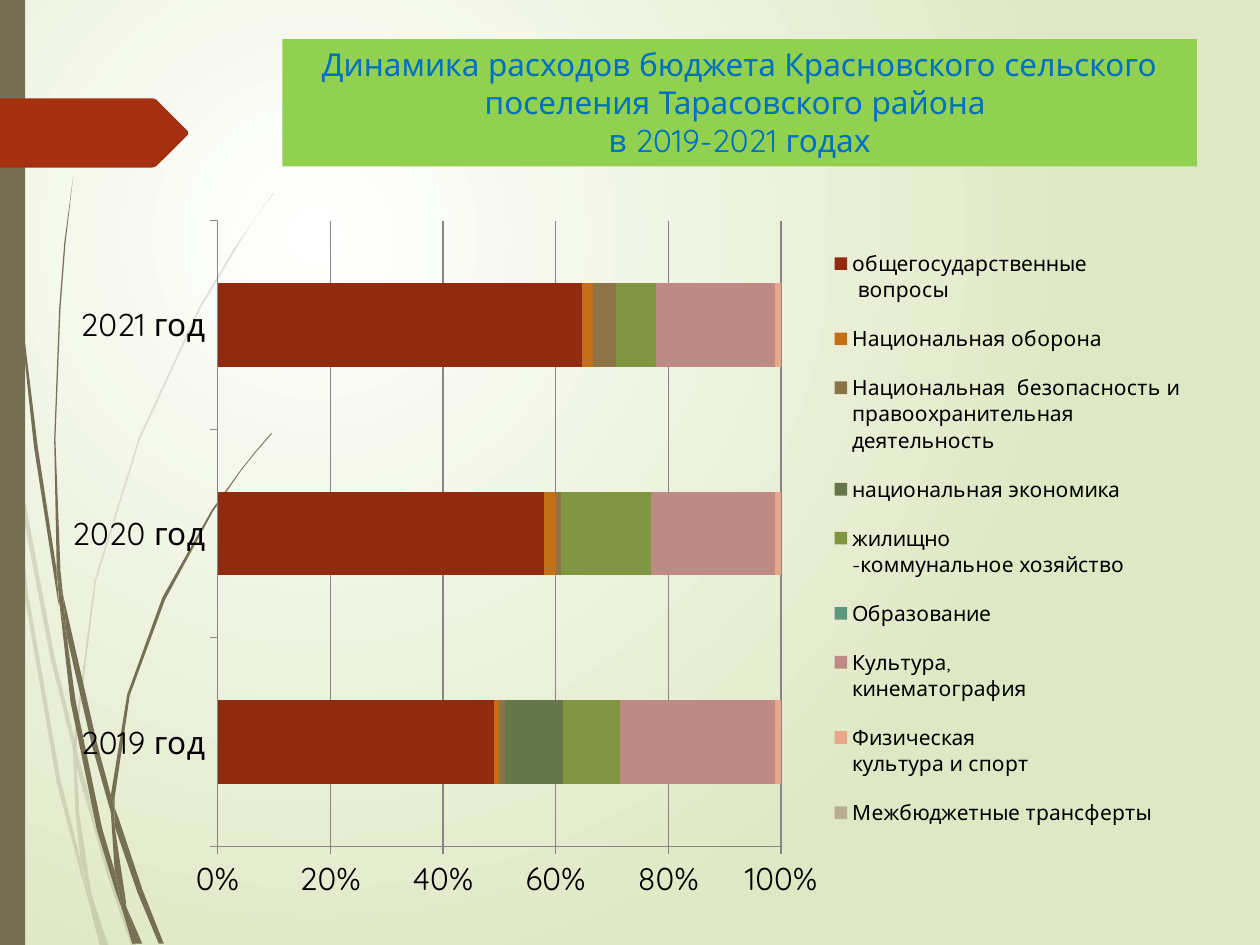
from lxml.etree import SubElement
from pptx import Presentation
from pptx.chart.data import CategoryChartData
from pptx.dml.color import RGBColor
from pptx.enum.chart import XL_CHART_TYPE, XL_LEGEND_POSITION, XL_TICK_MARK
from pptx.enum.shapes import MSO_SHAPE
from pptx.enum.text import MSO_ANCHOR, MSO_AUTO_SIZE, PP_ALIGN
from pptx.oxml import parse_xml
from pptx.oxml.ns import nsdecls, qn
from pptx.util import Pt

PX = 9144
FONT = "Quicksand"
WHITE = RGBColor(0xFF, 0xFF, 0xFF)
BLACK = RGBColor(0, 0, 0)
PALE_GREEN = RGBColor(0xDF, 0xE8, 0xC4)
BARK = RGBColor(0x76, 0x6F, 0x54)
RUST = RGBColor(0xA5, 0x30, 0x10)
LIME = RGBColor(0x92, 0xD0, 0x50)
BLUE = RGBColor(0x00, 0x70, 0xC0)
GREY = RGBColor(0x86, 0x86, 0x86)

YEARS = ["2019 год", "2020 год", "2021 год"]
EXPENSES = [
    ("общегосударственные\n вопросы", (48, 58, 64), RGBColor(0x91, 0x2A, 0x0E)),
    ("Национальная оборона", (1, 2, 2), RGBColor(0xC4, 0x6F, 0x15)),
    ("Национальная  безопасность и правоохранительная деятельность", (1, 1, 4),
     RGBColor(0x8C, 0x73, 0x48)),
    ("национальная экономика", (10, 0, 0), RGBColor(0x65, 0x76, 0x49)),
    ("жилищно\n-коммунальное хозяйство", (10, 16, 7), RGBColor(0x81, 0x96, 0x43)),
    ("Образование", (0, 0, 0), RGBColor(0x5D, 0x97, 0x80)),
    ("Культура, \nкинематография", (27, 22, 21), RGBColor(0xBE, 0x8A, 0x84)),
    ("Физическая\nкультура и спорт", (1, 1, 1), RGBColor(0xE8, 0xA8, 0x89)),
    ("Межбюджетные трансферты", (0, 0, 0), RGBColor(0xBC, 0xAC, 0x93)),
]

FAINT_WISPS = [
    [(8, 350), (6, 322), (0, 282), (0, 299), (7, 344)],
    [(40, 522), (59, 599), (59, 586), (43, 520), (10, 345), (12, 376)],
    [(64, 607), (61, 596), (61, 610), (85, 694), (104, 750), (108, 750), (88, 692)],
    [(83, 750), (86, 750), (73, 711)],
    [(64, 683), (48, 619), (22, 469), (12, 376), (8, 350), (19, 470), (45, 621),
     (64, 693), (70, 714), (69, 707)],
    [(58, 599), (60, 646), (64, 683), (67, 692), (73, 711), (72, 706), (63, 646),
     (61, 610), (61, 608)],
    [(61, 584), (76, 462), (111, 349), (159, 245), (187, 198), (201, 175), (217, 154),
     (217, 153), (201, 175), (186, 197), (158, 244), (110, 348), (75, 461), (59, 584),
     (59, 586), (61, 596)],
    [(70, 714), (79, 750), (82, 750)],
    [(61, 608), (61, 610), (61, 596), (59, 586), (58, 599)],
    [(67, 692), (65, 683), (69, 707), (70, 714), (82, 750), (83, 750), (73, 711)],
]
DARK_WISPS = [
    [(5, 110), (14, 233), (27, 355), (46, 477), (47, 481), (45, 457), (45, 453), (30, 355),
     (15, 232), (6, 109), (4, 48), (3, 0), (2, 0), (3, 48)],
    [(73, 592), (88, 645), (88, 633), (88, 631), (77, 590), (50, 472), (53, 505)],
    [(94, 649), (91, 641), (91, 656), (109, 708), (126, 749), (130, 749), (113, 706)],
    [(91, 691), (81, 657), (60, 556), (53, 505), (47, 477), (56, 557), (77, 659),
     (92, 708), (97, 722), (96, 717)],
    [(50, 472), (48, 453), (44, 349), (48, 245), (52, 193), (58, 141), (51, 193),
     (47, 245), (43, 349), (45, 449), (49, 472)],
    [(110, 749), (113, 749), (100, 719)],
    [(47, 477), (53, 505), (50, 472), (49, 472), (45, 449), (45, 453)],
    [(91, 633), (103, 552), (131, 476), (169, 406), (191, 374), (203, 359), (216, 344),
     (215, 344), (203, 358), (191, 373), (168, 405), (129, 474), (101, 551), (88, 631),
     (91, 641)],
    [(97, 722), (105, 749), (108, 749)],
    [(88, 645), (91, 691), (96, 706), (100, 719), (100, 716), (91, 656), (90, 651)],
    [(88, 645), (90, 651), (91, 656), (91, 641), (88, 631), (88, 633)],
    [(96, 706), (91, 691), (96, 717), (97, 722), (108, 749), (110, 749), (100, 719)],
]
POINTER = [(149, 29), (124, 54), (121, 55), (0, 55), (0, 0), (121, 0), (124, 1), (149, 26)]


def paint(shape, color, alpha=100):
    """Give a shape a flat fill with no line or shadow."""
    shape.fill.solid()
    shape.fill.fore_color.rgb = color
    shape.line.fill.background()
    shape.shadow.inherit = False
    if alpha < 100:
        tone = shape.fill._xPr.find(".//" + qn("a:srgbClr"))
        SubElement(tone, qn("a:alpha"), val=str(alpha * 1000))


def write(frame, words, size=18, color=BLACK, align=PP_ALIGN.LEFT):
    """Fill a text frame with one formatted paragraph."""
    frame.text = words
    for paragraph in frame.paragraphs:
        paragraph.alignment = align
        for run in paragraph.runs:
            run.font.name, run.font.size, run.font.color.rgb = FONT, Pt(size), color


def add_outline(shapes, points, left, top, color, alpha=100):
    """Draw a closed outline whose points start from left and top."""
    (x, y), *rest = [(left + dx, top + dy) for dx, dy in points]
    builder = shapes.build_freeform(x, y, scale=PX)
    builder.add_line_segments(rest, close=True)
    paint(builder.convert_to_shape(), color, alpha)


def add_background(slide):
    """Spread a round gradient from the upper left quarter."""
    fill = slide.background.fill
    fill.gradient()
    for stop, color in zip(fill.gradient_stops, (WHITE, PALE_GREEN)):
        stop.color.rgb = color
    gradient = slide._element.find(".//" + qn("a:gradFill"))
    gradient.replace(gradient.find(qn("a:lin")), parse_xml(
        f'<a:path {nsdecls("a")} path="circle">'
        '<a:fillToRect l="50000" t="50000" r="100000" b="100000"/></a:path>'))


def add_decor(slide, left, top, width, height):
    """Draw the wisps, the side strip and the pointer."""
    for wisps, alpha in ((FAINT_WISPS, 20), (DARK_WISPS, 100)):
        group = slide.shapes.add_group_shape()
        for wisp in wisps:
            add_outline(group.shapes, wisp, left, top, BARK, alpha)
    strip = slide.shapes.add_shape(
        MSO_SHAPE.RECTANGLE, left * PX, top * PX, width * PX, height * PX)
    paint(strip, BARK)
    add_outline(slide.shapes, POINTER, left, top + 78, RUST)


def add_title(slide, left, top, width, height):
    """Place the heading on its green plate."""
    title = slide.shapes.title
    title.left, title.top, title.width, title.height = (
        side * PX for side in (left, top, width, height))
    title.fill.solid()
    title.fill.fore_color.rgb = LIME
    frame = title.text_frame
    frame.word_wrap = True
    frame.auto_size = MSO_AUTO_SIZE.SHAPE_TO_FIT_TEXT
    frame.vertical_anchor = MSO_ANCHOR.TOP
    write(frame, "Динамика расходов бюджета Красновского сельского поселения "
          "Тарасовского района \vв 2019-2021 годах", color=BLUE, align=PP_ALIGN.CENTER)


def set_layout(part, x, y, w, h, target=""):
    """Fix a chart part at fractions of the chart area."""
    for old in part.findall(qn("c:layout")):
        part.remove(old)
    layout = parse_xml(
        f'<c:layout {nsdecls("c")}><c:manualLayout>{target}'
        '<c:xMode val="edge"/><c:yMode val="edge"/>'
        f'<c:x val="{x}"/><c:y val="{y}"/><c:w val="{w}"/><c:h val="{h}"/>'
        '</c:manualLayout></c:layout>')
    position = part.find(qn("c:legendPos"))
    part.insert(0 if position is None else part.index(position) + 1, layout)


def add_expense_chart(slide, left, top, width, height):
    """Plot the expense shares of each year."""
    data = CategoryChartData()
    data.categories = YEARS
    for name, shares, _ in EXPENSES:
        data.add_series(name, shares)
    chart = slide.shapes.add_chart(XL_CHART_TYPE.BAR_STACKED_100, left * PX, top * PX,
                                   width * PX, height * PX, data).chart
    chart.has_title = False
    chart.font.name, chart.font.size, chart.font.color.rgb = FONT, Pt(18), BLACK
    plot = chart.plots[0]
    plot.gap_width, plot.overlap, plot.vary_by_categories = 150, 100, False
    for series, (_, _, color) in zip(plot.series, EXPENSES):
        series.format.fill.solid()
        series.format.fill.fore_color.rgb = color
    for axis in (chart.category_axis, chart.value_axis):
        axis.major_tick_mark = XL_TICK_MARK.OUTSIDE
        axis.format.line.color.rgb = GREY
    shares_axis = chart.value_axis
    shares_axis.maximum_scale, shares_axis.major_unit = 1, 0.2
    shares_axis.tick_labels.number_format = "0%"
    shares_axis.tick_labels.number_format_is_linked = False
    shares_axis.has_major_gridlines = True
    shares_axis.major_gridlines.format.line.color.rgb = GREY
    chart.has_legend = True
    legend = chart.legend
    legend.position, legend.include_in_layout = XL_LEGEND_POSITION.RIGHT, False
    legend.font.name, legend.font.size, legend.font.color.rgb = FONT, Pt(12), BLACK
    set_layout(legend._element, 0.66, 0.03, 0.33, 0.88)
    set_layout(chart._chartSpace.chart.plotArea, 0.145, 0.02, 0.485, 0.887,
               '<c:layoutTarget val="inner"/>')


def main():
    """Build and save the budget slide."""
    deck = Presentation()
    deck.slide_width, deck.slide_height = 1000 * PX, 750 * PX
    slide = deck.slides.add_slide(deck.slide_layouts[5])
    add_background(slide)
    add_decor(slide, 0, 0, 20, 750)
    add_expense_chart(slide, 39, 164, 922, 560)
    add_title(slide, 224, 31, 726, 101)
    deck.save("out.pptx")


if __name__ == "__main__":
    main()
